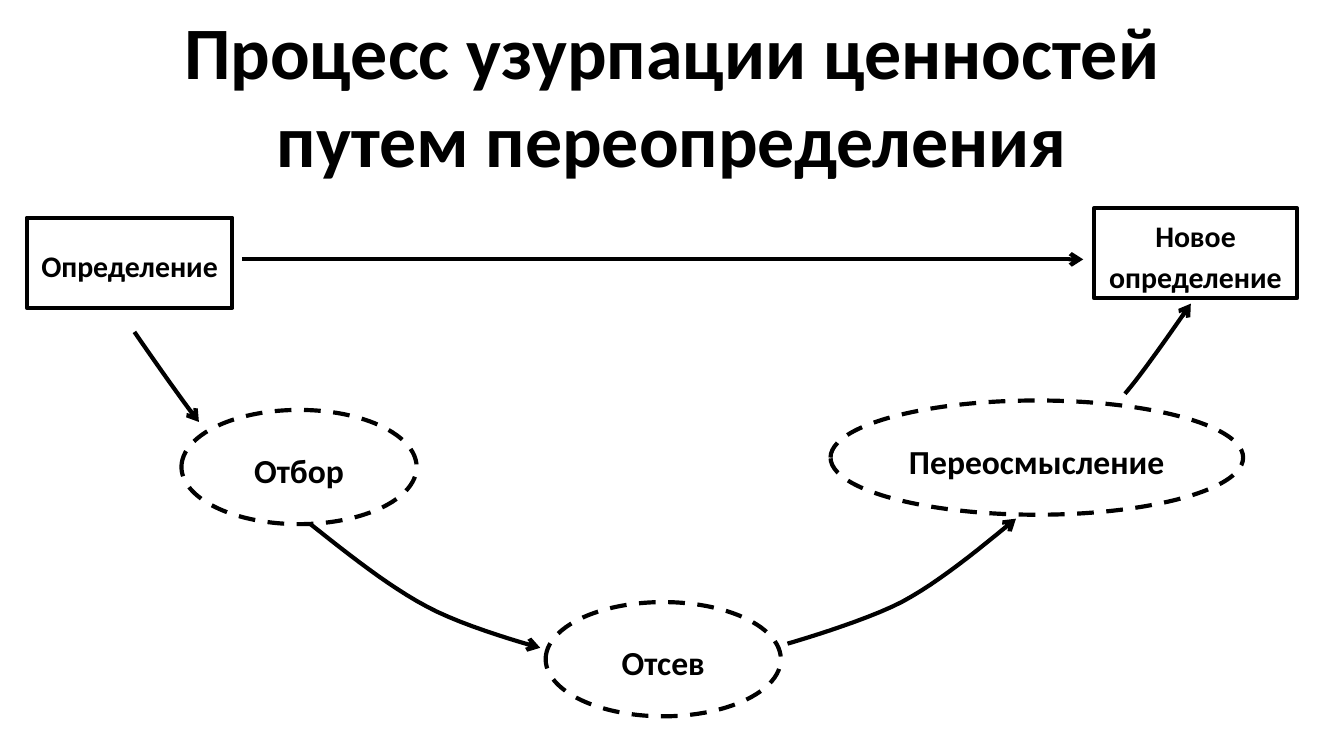
from lxml.etree import SubElement
from pptx import Presentation
from pptx.dml.color import RGBColor
from pptx.enum.dml import MSO_LINE
from pptx.enum.shapes import MSO_CONNECTOR, MSO_SHAPE
from pptx.enum.text import MSO_ANCHOR, PP_ALIGN
from pptx.oxml.ns import qn
from pptx.util import Inches, Pt

BLACK = RGBColor(0, 0, 0)
WHITE = RGBColor(255, 255, 255)
FONT = "Calibri"
STEPS = 12

TITLE = "Процесс узурпации ценностей путем переопределения"
TERMS = [
    ("Определение", 0.2, 1.62, 1.53, 0.67),
    ("Новое определение", 8.14, 1.55, 1.51, 0.67),
]
STAGES = [
    ("Отбор", 1.35, 3.05, 1.75, 0.85),
    ("Отсев", 4.06, 4.48, 1.75, 0.85),
    ("Переосмысление", 6.18, 2.98, 3.07, 0.85),
]
CURVES = [
    [(1, 2.47), (1.2, 2.76), (1.4, 3.04), (1.48, 3.14)],
    [(2.31, 3.9), (2.6, 4.13), (2.89, 4.36), (3.17, 4.51),
     (3.46, 4.67), (4.02, 4.82), (4.02, 4.82)],
    [(5.86, 4.79), (5.86, 4.79), (6.42, 4.63), (6.71, 4.48),
     (6.99, 4.33), (7.28, 4.09), (7.56, 3.86)],
    [(8.37, 2.93), (8.46, 2.83), (8.66, 2.55), (8.86, 2.26)],
]
DIRECT = [(1.8, 1.93), (8.06, 1.93)]


def write(tf, text, size):
    tf.word_wrap = True
    tf.vertical_anchor = MSO_ANCHOR.MIDDLE
    p = tf.paragraphs[0]
    p.alignment = PP_ALIGN.CENTER
    r = p.add_run()
    r.text = text
    r.font.name, r.font.size, r.font.bold = FONT, Pt(size), True
    r.font.color.rgb = BLACK
    return p


def outline(sp):
    sp.line.color.rgb = BLACK
    sp.line.width = Pt(2.25)


def add_node(s, kind, node, size):
    text, *box = node
    sp = s.shapes.add_shape(kind, *map(Inches, box))
    sp.shadow.inherit = False
    sp.fill.solid()
    sp.fill.fore_color.rgb = WHITE
    outline(sp)
    tf = sp.text_frame
    tf.margin_left = tf.margin_right = Inches(0.05)
    p = write(tf, text, size)
    p.line_spacing = 1.15
    p.space_after = Pt(10)
    return sp


def add_arrowhead(sp):
    outline(sp)
    SubElement(sp.line._get_or_add_ln(), qn("a:tailEnd"), type="arrow")


def bezier(pts, t):
    weights = ((1 - t) ** 3, 3 * t * (1 - t) ** 2, 3 * t * t * (1 - t), t ** 3)
    return tuple(Inches(sum(w * v for w, v in zip(weights, axis)))
                 for axis in zip(*pts))


def add_curve(s, pts):
    points = [bezier(pts[i:i + 4], k / STEPS)
              for i in range(0, len(pts) - 1, 3) for k in range(1, STEPS + 1)]
    fb = s.shapes.build_freeform(*map(Inches, pts[0]))
    fb.add_line_segments(points, close=False)
    sp = fb.convert_to_shape()
    sp.shadow.inherit = False
    sp.fill.background()
    add_arrowhead(sp)


def main():
    prs = Presentation()
    prs.slide_width = Inches(10)
    prs.slide_height = prs.slide_width * 9 // 16
    s = prs.slides.add_slide(prs.slide_layouts[5])
    title = s.shapes.title
    title.left, title.top = Inches(0.5), Inches(0.23)
    title.width, title.height = Inches(9), Inches(0.94)
    write(title.text_frame, TITLE, 39.6)

    for node in TERMS:
        add_node(s, MSO_SHAPE.RECTANGLE, node, 16)
    for node in STAGES:
        add_node(s, MSO_SHAPE.OVAL, node, 18).line.dash_style = MSO_LINE.DASH
    for pts in CURVES:
        add_curve(s, pts)

    (x1, y1), (x2, y2) = DIRECT
    line = s.shapes.add_connector(MSO_CONNECTOR.STRAIGHT,
                                  *map(Inches, (x1, y1, x2, y2)))
    add_arrowhead(line)
    SubElement(line._element.spPr, qn("a:effectLst"))
    prs.save("out.pptx")


if __name__ == "__main__":
    main()
